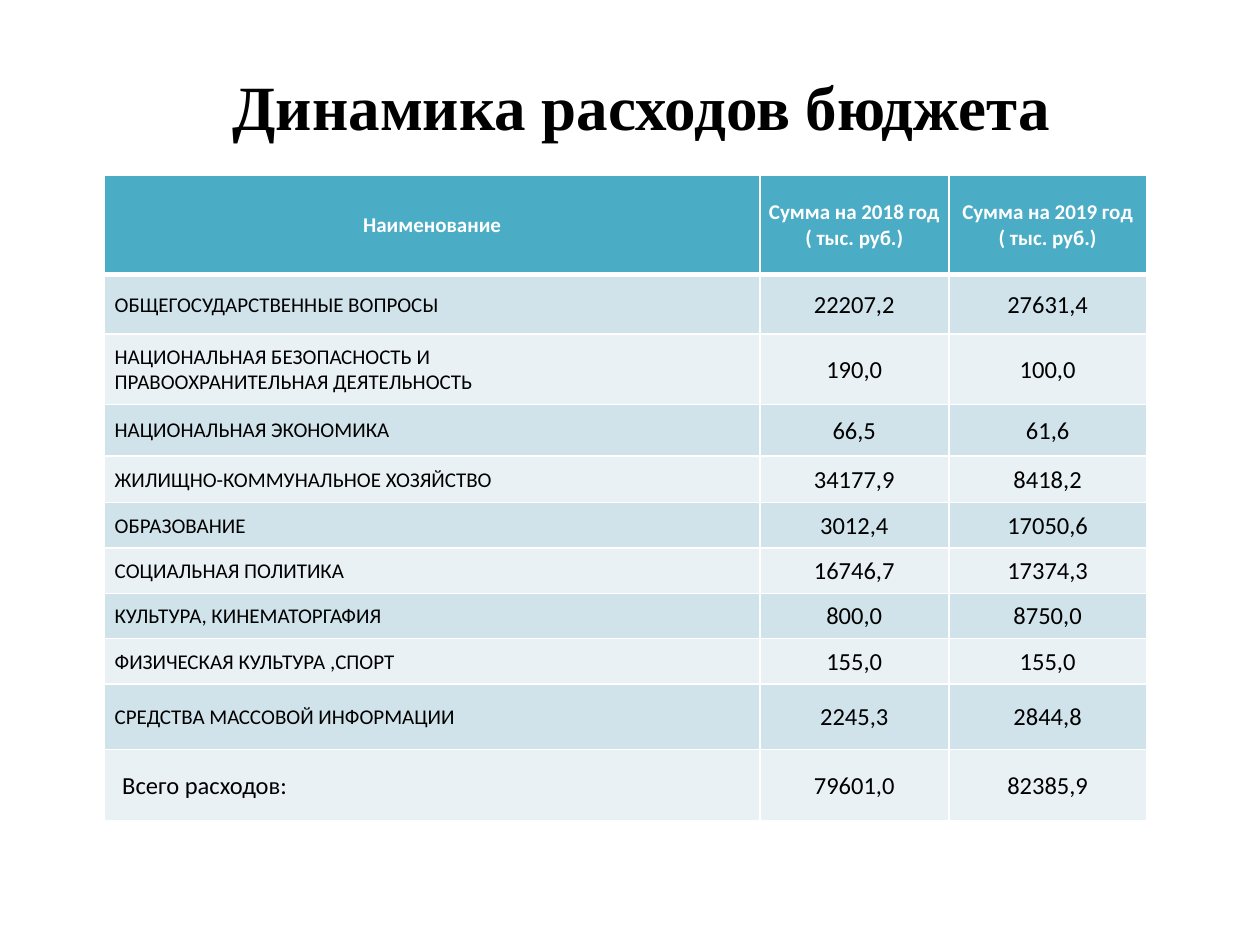
from dataclasses import dataclass

from lxml import etree
from pptx import Presentation
from pptx import util as u
from pptx.dml.color import RGBColor
from pptx.enum import text
from pptx.oxml import ns


@dataclass(frozen=True)
class Theme:
    body_font: str = "Calibri"
    title_font: str = "Times New Roman"
    title_size: int = 36
    label_size: int = 12
    value_size: int = 14
    ink: str = "000000"
    white: str = "FFFFFF"
    header: str = "4BACC6"
    bands: tuple = ("D0E3EA", "E9F1F5")
    rule: int = 1
    header_rule: int = 3


THEME = Theme()
TITLE = "Динамика расходов бюджета"
HEADINGS = (
    "Наименование",
    "Сумма на 2018 год\n( тыс. руб.)",
    "Сумма на 2019 год\n( тыс. руб.)",
)
EXPENSES = (
    ("ОБЩЕГОСУДАРСТВЕННЫЕ ВОПРОСЫ", "22207,2", "27631,4"),
    ("НАЦИОНАЛЬНАЯ БЕЗОПАСНОСТЬ И\nПРАВООХРАНИТЕЛЬНАЯ ДЕЯТЕЛЬНОСТЬ", "190,0", "100,0"),
    ("НАЦИОНАЛЬНАЯ ЭКОНОМИКА", "66,5", "61,6"),
    ("ЖИЛИЩНО-КОММУНАЛЬНОЕ ХОЗЯЙСТВО", "34177,9", "8418,2"),
    ("ОБРАЗОВАНИЕ", "3012,4", "17050,6"),
    ("СОЦИАЛЬНАЯ ПОЛИТИКА", "16746,7", "17374,3"),
    ("КУЛЬТУРА, КИНЕМАТОРГАФИЯ", "800,0", "8750,0"),
    ("ФИЗИЧЕСКАЯ КУЛЬТУРА ,СПОРТ", "155,0", "155,0"),
    ("СРЕДСТВА МАССОВОЙ ИНФОРМАЦИИ", "2245,3", "2844,8"),
)
TOTAL = ("Всего расходов:", "79601,0", "82385,9")
COLUMN_WIDTHS = (5.2, 1.5, 1.57)
ROW_HEIGHTS = (0.79, 0.47, 0.56, 0.41, 0.37, 0.36, 0.36, 0.36, 0.36, 0.52, 0.57)


def write(frame, wording, size, color, font=THEME.body_font, bold=False, centered=True):
    frame.word_wrap = True
    for index, line in enumerate(wording.split("\n")):
        paragraph = frame.paragraphs[0] if index == 0 else frame.add_paragraph()
        paragraph.alignment = text.PP_ALIGN.CENTER if centered else text.PP_ALIGN.LEFT
        run = paragraph.add_run()
        run.text = line
        run.font.name = font
        run.font.size = u.Pt(size)
        run.font.bold = bold
        run.font.color.rgb = RGBColor.from_string(color)


def set_borders(cell, bottom_width):
    properties = cell._tc.get_or_add_tcPr()
    widths = {"lnL": THEME.rule, "lnR": THEME.rule, "lnT": THEME.rule, "lnB": bottom_width}
    for position, (side, width) in enumerate(widths.items()):
        border = etree.Element(ns.qn(f"a:{side}"), w=str(u.Pt(width)))
        fill = etree.SubElement(border, ns.qn("a:solidFill"))
        etree.SubElement(fill, ns.qn("a:srgbClr"), val=THEME.white)
        properties.insert(position, border)


def style_cell(cell, fill, bottom_width=THEME.rule, indent=0.01):
    cell.fill.solid()
    cell.fill.fore_color.rgb = RGBColor.from_string(fill)
    cell.vertical_anchor = text.MSO_ANCHOR.MIDDLE
    cell.margin_left = u.Inches(indent)
    cell.margin_top = cell.margin_right = u.Inches(0.01)
    cell.margin_bottom = 0
    set_borders(cell, bottom_width)


def fill_header(table):
    for column, heading in enumerate(HEADINGS):
        cell = table.cell(0, column)
        style_cell(cell, THEME.header, THEME.header_rule)
        write(cell.text_frame, heading, THEME.label_size, THEME.white, bold=True)


def fill_row(table, row, entries, label_size, indent):
    band = THEME.bands[(row - 1) % 2]
    for column, entry in enumerate(entries):
        is_label = column == 0
        cell = table.cell(row, column)
        style_cell(cell, band, THEME.rule, indent if is_label else 0.01)
        size = label_size if is_label else THEME.value_size
        write(cell.text_frame, entry, size, THEME.ink, centered=not is_label)


def add_budget(slide):
    table = slide.shapes.add_table(
        len(ROW_HEIGHTS), len(COLUMN_WIDTHS), u.Inches(0.83), u.Inches(1.39),
        u.Inches(sum(COLUMN_WIDTHS)), u.Inches(sum(ROW_HEIGHTS)),
    ).table
    for column, width in zip(table.columns, COLUMN_WIDTHS):
        column.width = u.Inches(width)
    for row, height in zip(table.rows, ROW_HEIGHTS):
        row.height = u.Inches(height)
    fill_header(table)
    for row, entries in enumerate(EXPENSES, start=1):
        fill_row(table, row, entries, THEME.label_size, indent=0.08)
    fill_row(table, len(EXPENSES) + 1, TOTAL, THEME.value_size, indent=0.14)


def add_title(slide):
    title = slide.shapes.add_textbox(
        u.Inches(0.59), u.Inches(0.21), u.Inches(9), u.Inches(1.25)
    )
    title.text_frame.vertical_anchor = text.MSO_ANCHOR.MIDDLE
    write(title.text_frame, TITLE, THEME.title_size, THEME.ink, THEME.title_font, bold=True)


def main():
    deck = Presentation()
    deck.slide_width = u.Inches(10)
    deck.slide_height = u.Inches(7.5)
    slide = deck.slides.add_slide(deck.slide_layouts[6])
    add_budget(slide)
    add_title(slide)
    deck.save("out.pptx")


if __name__ == "__main__":
    main()
